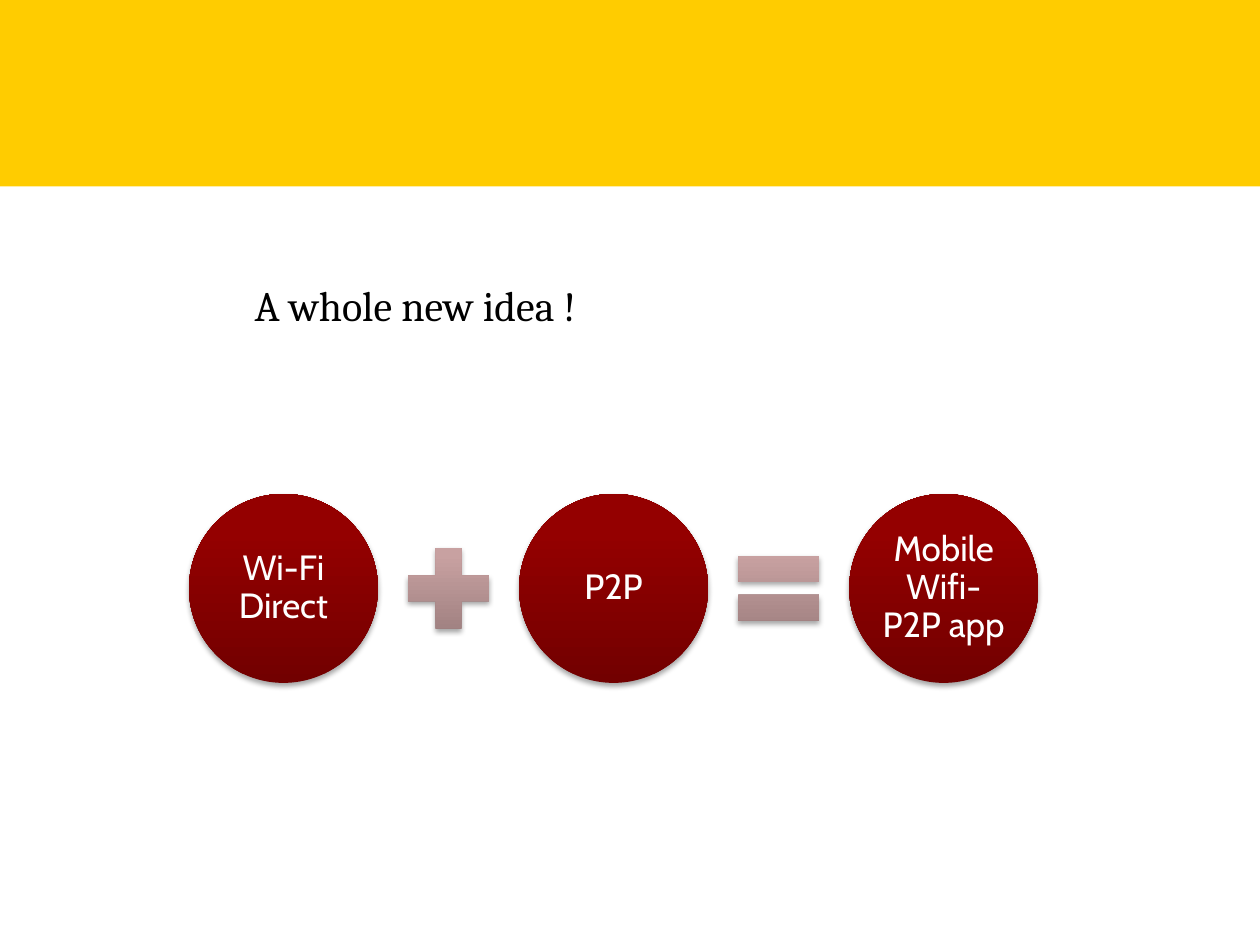
from copy import deepcopy

from lxml.etree import SubElement
from pptx import Presentation
from pptx.dml.color import RGBColor
from pptx.enum.shapes import MSO_SHAPE as Shape
from pptx.enum.text import MSO_ANCHOR as Anchor, PP_ALIGN as Align
from pptx.oxml.ns import qn
from pptx.util import Inches, Pt

TITLE = "A whole new idea !"
RED = [(0, "720000"), (0.8, "940000"), (1, "950000")]
PINK = [(0, "9A7C7C"), (0.8, "C8A1A1"), (1, "CAA1A1")]
EQUATION = [
    (Shape.OVAL, "Wi-Fi Direct"),
    (Shape.MATH_PLUS, ""),
    (Shape.OVAL, "P2P"),
    (Shape.MATH_EQUAL, ""),
    (Shape.OVAL, "Mobile Wifi-P2P app"),
]
WIDTH, HEIGHT, BAND = 10, 7.5, 1.48
CIRCLE, SIGN, PITCH = 1.5, 0.87, 2.62
START, MIDDLE = 1.5, 4.67


def color(value):
    return RGBColor.from_string(value)


def add_shape(slide, kind, left, top, width, height):
    shape = slide.shapes.add_shape(kind, *map(Inches, (left, top, width, height)))
    shape.shadow.inherit = False
    shape.line.fill.background()
    return shape


def set_gradient(shape, stops):
    shape.fill.gradient()
    shape.fill.gradient_angle = 90
    stop_list = shape._element.spPr.find(qn("a:gradFill")).find(qn("a:gsLst"))
    stop_list.append(deepcopy(stop_list[-1]))
    for stop, (position, value) in zip(shape.fill.gradient_stops, stops):
        stop.position = position
        stop.color.rgb = color(value)


def set_shadow(shape):
    effects = shape._element.spPr.find(qn("a:effectLst"))
    shadow = SubElement(effects, qn("a:outerShdw"), blurRad=str(Pt(3.1)),
                        dist=str(Pt(1.8)), dir="5400000", rotWithShape="0")
    black = SubElement(shadow, qn("a:srgbClr"), val="000000")
    SubElement(black, qn("a:alpha"), val="35000")


def set_font(paragraph, name, size, value):
    for run in paragraph.runs:
        run.font.name = name
        run.font.size = Pt(size)
        run.font.color.rgb = color(value)


def add_label(shape, text):
    frame = shape.text_frame
    frame.text = text
    frame.word_wrap = True
    frame.vertical_anchor = Anchor.MIDDLE
    frame.margin_left = frame.margin_right = Inches(0.03)
    frame.margin_top = frame.margin_bottom = Inches(0.03)
    paragraph = frame.paragraphs[0]
    paragraph.alignment = Align.CENTER
    paragraph.line_spacing = 0.9
    set_font(paragraph, "Cabin", 20, "FFFFFF")


def add_title(slide):
    title = slide.shapes.title
    title.left, title.top, title.width, title.height = map(Inches, (1.92, 2.17, 5.92, 0.5))
    frame = title.text_frame
    frame.text = TITLE
    frame.word_wrap = True
    frame.vertical_anchor = Anchor.TOP
    frame.paragraphs[0].alignment = Align.LEFT
    set_font(frame.paragraphs[0], "Cambria", 24, "000000")


def main():
    """Build the slide with a title above an equation of circles and signs."""
    presentation = Presentation()
    presentation.slide_width, presentation.slide_height = Inches(WIDTH), Inches(HEIGHT)
    slide = presentation.slides.add_slide(presentation.slide_layouts[5])
    band = add_shape(slide, Shape.RECTANGLE, 0, 0, WIDTH, BAND)
    band.fill.solid()
    band.fill.fore_color.rgb = color("FFCC00")
    add_title(slide)
    for index, (kind, text) in enumerate(EQUATION):
        size, stops = (CIRCLE, RED) if text else (SIGN, PINK)
        center = START + CIRCLE / 2 + index * PITCH / 2
        shape = add_shape(slide, kind, center - size / 2, MIDDLE - size / 2, size, size)
        set_gradient(shape, stops)
        set_shadow(shape)
        if text:
            add_label(shape, text)
    presentation.save("out.pptx")


if __name__ == "__main__":
    main()
